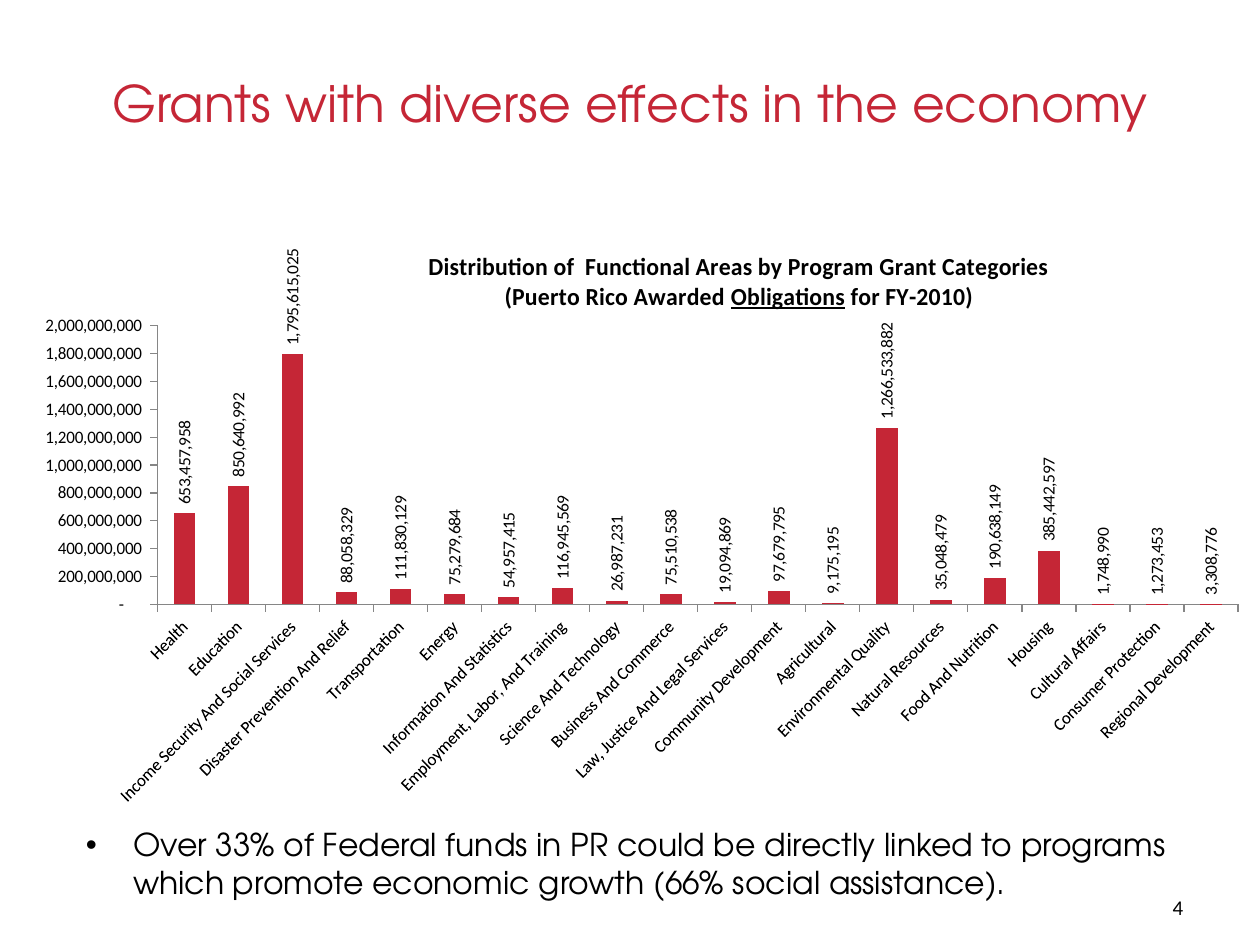
from pptx import Presentation
from pptx.util import Pt
from pptx.dml.color import RGBColor as RGB
from pptx.chart.data import CategoryChartData as Data
from pptx.enum.chart import XL_CHART_TYPE as Kind, XL_LABEL_POSITION as Spot, XL_TICK_MARK as Tick
from pptx.enum.text import PP_ALIGN as Align, MSO_ANCHOR as Anchor, MSO_AUTO_SIZE as Fit
from pptx.oxml import parse_xml
from pptx.oxml.ns import nsdecls, qn
from lxml.etree import SubElement

red, black, gray = (RGB.from_string(c) for c in ("C52636", "000000", "868686"))
head_face, text_face = "TeX Gyre Adventor", "Calibri"
theme = {
    "title": {"name": head_face, "size": Pt(28.8), "color": red},
    "body": {"name": head_face, "size": Pt(18), "color": black},
    "page": {"name": text_face, "size": Pt(12), "color": black},
    "chart": {"name": text_face, "size": Pt(10), "color": black},
    "caption": {"name": text_face, "size": Pt(14), "color": black, "bold": True},
}
num_fmt = '_(* #,##0_);_(* \\(#,##0\\);_(* "-"??_);_('
areas = {
    "Health": 653457958,
    "Education": 850640992,
    "Income Security And Social Services": 1795615025,
    "Disaster Prevention And Relief": 88058329,
    "Transportation": 111830129,
    "Energy": 75279684,
    "Information And Statistics": 54957415,
    "Employment, Labor, And Training": 116945569,
    "Science And Technology": 26987231,
    "Business And Commerce": 75510538,
    "Law, Justice And Legal Services": 19094869,
    "Community Development": 97679795,
    "Agricultural": 9175195,
    "Environmental Quality": 1266533882,
    "Natural Resources": 35048479,
    "Food And Nutrition": 190638149,
    "Housing": 385442597,
    "Cultural Affairs": 1748990,
    "Consumer Protection": 1273453,
    "Regional Development": 3308776,
}


def style(font, role):
    for key, val in theme[role].items():
        if key == "color":
            font.color.rgb = val
        else:
            setattr(font, key, val)


def place(node, index, **spots):
    """Give a chart part a manual layout, in fractions of the chart."""
    for old in node.findall(qn("c:layout")):
        node.remove(old)
    layout = parse_xml(f"<c:layout {nsdecls('c')}><c:manualLayout/></c:layout>")
    for tag, val in spots.items():
        SubElement(layout[0], qn(f"c:{tag}")).set("val", str(val))
    node.insert(index, layout)


deck = Presentation()
deck.slide_width, deck.slide_height = Pt(720), Pt(540)
slide = deck.slides.add_slide(deck.slide_layouts[1])
title, body = slide.placeholders

# Title, list and page number
page = slide.shapes.add_textbox(Pt(663), Pt(507.5), Pt(42), Pt(22))
texts = [
    (title, "title", "Grants with diverse effects in the economy",
     (36, 21.6, 648, 74), Align.CENTER, Anchor.MIDDLE),
    (body, "body", "Over 33% of Federal funds in PR could be directly linked to programs "
     "which promote economic growth (66% social assistance).",
     (41.8, 468, 648, 70.5), Align.LEFT, Anchor.TOP),
    (page, "page", "4", (663, 507.6, 42, 21.6), Align.LEFT, Anchor.TOP),
]
for shape, role, words, box, align, anchor in texts:
    shape.left, shape.top, shape.width, shape.height = map(Pt, box)
    frame = shape.text_frame
    frame.text = words
    frame.word_wrap, frame.auto_size = True, Fit.NONE
    frame.vertical_anchor = anchor
    para = frame.paragraphs[0]
    para.alignment = align
    style(para.runs[0].font, role)

props = body.text_frame.paragraphs[0]._p.get_or_add_pPr()
props.set("marL", str(Pt(27)))
props.set("indent", str(Pt(-27)))
SubElement(props, qn("a:buFont")).set("typeface", "Arial")
SubElement(props, qn("a:buChar")).set("char", "•")

# Column chart
data = Data(number_format=num_fmt)
data.categories = list(areas)
data.add_series("Series 1", list(areas.values()))
chart = slide.shapes.add_chart(
    Kind.COLUMN_CLUSTERED, Pt(23.8), Pt(126), Pt(684), Pt(354), data).chart
chart.has_legend = False
style(chart.font, "chart")

chart.has_title = True
frame = chart.chart_title.text_frame
lines = [
    [("Distribution of  Functional Areas by Program Grant Categories", False)],
    [("(Puerto Rico Awarded ", False), ("Obligations", True), (" for FY-2010)", False)],
]
for i, line in enumerate(lines):
    para = frame.add_paragraph() if i else frame.paragraphs[0]
    for words, under in line:
        run = para.add_run()
        run.text = words
        style(run.font, "caption")
        run.font.underline = under

plot = chart.plots[0]
plot.gap_width, plot.vary_by_categories = 150, False
fill = plot.series[0].format.fill
fill.solid()
fill.fore_color.rgb = red
plot.has_data_labels = True
labels = plot.data_labels
label_set = {"show_value": True, "number_format": num_fmt,
             "number_format_is_linked": False, "position": Spot.OUTSIDE_END}
for key, val in label_set.items():
    setattr(labels, key, val)

cats, vals = chart.category_axis, chart.value_axis
for axis in (cats, vals):
    axis.has_major_gridlines = False
    axis.major_tick_mark = Tick.OUTSIDE
    axis.format.line.color.rgb = gray
    axis.format.line.width = Pt(0.75)
vals.minimum_scale, vals.maximum_scale, vals.major_unit = 0, 2e9, 2e8
vals.tick_labels.number_format = num_fmt
vals.tick_labels.number_format_is_linked = False

for part, owner, turn in ((labels, "c:dLbls", -90), (cats.tick_labels, "c:catAx", -45)):
    style(part.font, "chart")
    for node in chart.element.xpath(f".//{owner}/c:txPr/a:bodyPr"):
        node.set("rot", str(turn * 60000))
        node.set("vert", "horz")

place(chart.element.xpath("./c:chart/c:title")[0], 1,
      xMode="edge", yMode="edge", x=0.3, y=0.04)
place(chart.element.xpath("./c:chart/c:plotArea")[0], 0, layoutTarget="inner",
      xMode="edge", yMode="edge", x=0.11, y=0.17, w=0.93, h=0.45)

deck.save("out.pptx")
